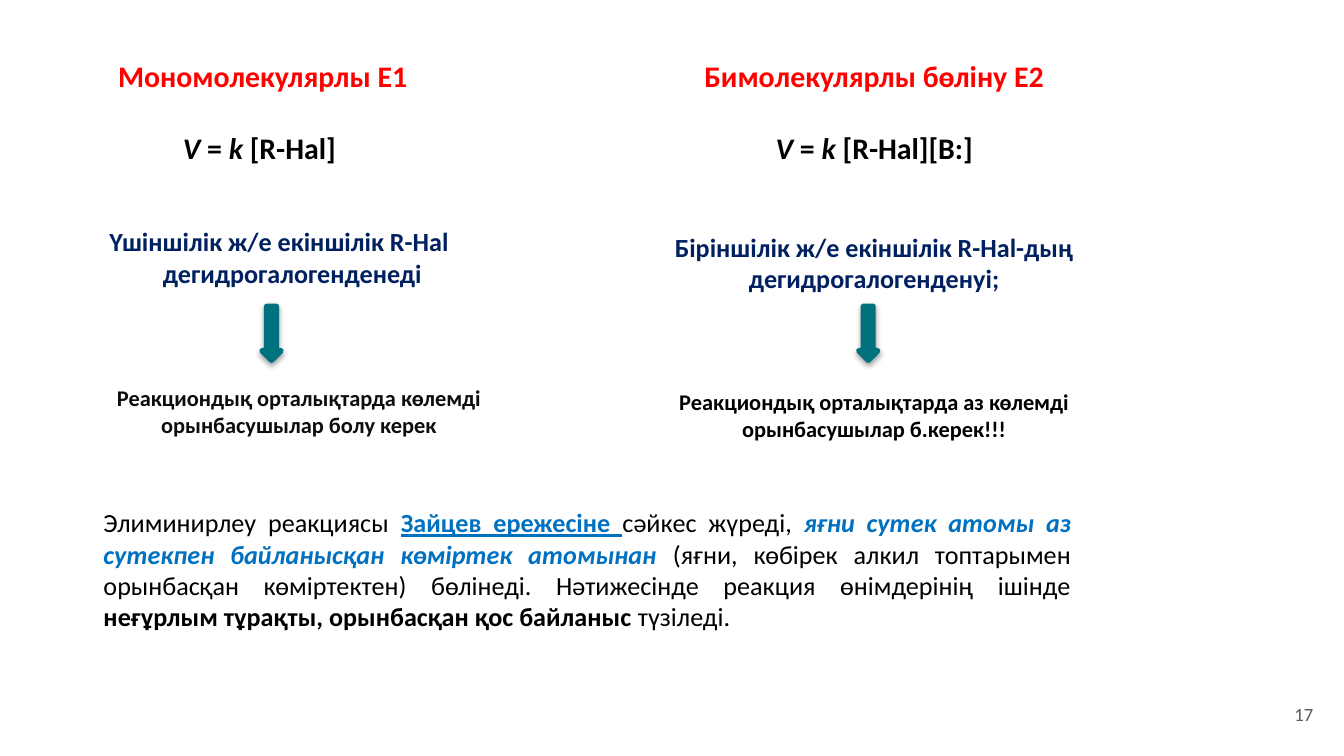
import pptx
import pptx.util
import pptx.dml.color
import pptx.enum.shapes
import pptx.enum.text
import pptx.oxml
import pptx.oxml.ns

Inches = pptx.util.Inches
Pt = pptx.util.Pt
ALIGN = pptx.enum.text.PP_ALIGN
COLORS = {
    "red": "FF0000", "navy": "002060", "blue": "0070C0", "black": "000000",
    "dark": "0D0D0D", "gray": "595959", "teal": "00717D",
}
LINE_16, LINE_14 = 19.5, 17  # line heights in points

presentation = pptx.Presentation()
presentation.slide_width = Inches(10)
presentation.slide_height = Inches(10 * 9 / 16)
slide = presentation.slides.add_slide(presentation.slide_layouts[6])


def rgb(name):
    return pptx.dml.color.RGBColor.from_string(COLORS[name])


def add_text(position, paragraphs):
    """Each paragraph is (align, size, color, bold, space before, runs); each run is (text, font changes)."""
    box = slide.shapes.add_textbox(*map(Inches, position))
    frame = box.text_frame
    frame.word_wrap = True
    for index, (align, size, color, bold, space, runs) in enumerate(paragraphs):
        paragraph = frame.add_paragraph() if index else frame.paragraphs[0]
        paragraph.alignment = align
        paragraph.space_before = Pt(space)
        paragraph.font.name = "Calibri"
        paragraph.font.size = Pt(size)
        paragraph.font.bold = bold
        paragraph.font.color.rgb = rgb(color)
        for text, changes in runs:
            run = paragraph.add_run()
            run.text = text
            for key, value in changes.items():
                if key == "color":
                    run.font.color.rgb = rgb(value)
                else:
                    setattr(run.font, key, value)
    return frame


# Reaction type and rate law of each column, with what follows below on the right
italic = {"italic": True}
columns = [
    ((0.76, 0.38, 2.39, 1.18), "Мономолекулярлы Е1", " [R-Hal] ", []),
    ((4.53, 0.38, 3.95, 3.26), "Бимолекулярлы бөліну Е2", " [R-Hal][B:]", [
        (ALIGN.CENTER, 14, "navy", True, LINE_16 + LINE_14 - 1.5,
         [("Біріншілік ж/е екіншілік R-Hal-дың дегидрогалогенденуі;", {})]),
        (ALIGN.CENTER, 12, "black", True, 3 * LINE_14 - 0.5,
         [("Реакциондық орталықтарда аз көлемді орынбасушылар б.керек!!!", {})]),
    ]),
]
for position, title, concentrations, details in columns:
    rate_law = [("V", italic), (" = ", {}), ("k", italic), (concentrations, {})]
    add_text(position, [
        (ALIGN.CENTER, 16, "red", True, 0, [(title, {})]),
        (ALIGN.CENTER, 16, "black", True, LINE_16, rate_law),
    ] + details)

# Left column: substrate and requirement
substrate = add_text((0.65, 1.63, 3.03, 1.04), [
    (ALIGN.LEFT, 14, "navy", True, 0, [(" Үшіншілік ж/е екіншілік R-Hal", {})]),
    (ALIGN.CENTER, 14, "navy", True, 0, [("дегидрогалогенденеді", {})]),
])
substrate.margin_left = Inches(0.12)
add_text((0.63, 2.81, 3.19, 0.5), [
    (ALIGN.CENTER, 12, "dark", True, 0,
     [("Реакциондық орталықтарда көлемді орынбасушылар болу керек", {})]),
])

# Arrows from substrate to requirement
for left in (1.82, 6.26):
    arrow = slide.shapes.add_shape(
        pptx.enum.shapes.MSO_SHAPE.RIGHT_ARROW,
        Inches(left), Inches(2.41), Inches(0.4), Inches(0.14))
    arrow.rotation = 90
    arrow.fill.solid()
    arrow.fill.fore_color.rgb = rgb("teal")
    arrow.line.color.rgb = rgb("teal")
    arrow.line.width = Pt(3)
    arrow.shadow.inherit = False
    effects = arrow._element.spPr.find(pptx.oxml.ns.qn("a:effectLst"))
    effects.append(pptx.oxml.parse_xml(
        '<a:outerShdw xmlns:a="http://schemas.openxmlformats.org/drawingml/2006/main" '
        f'blurRad="{Pt(3.1)}" dist="{Pt(1.6)}" dir="5400000" rotWithShape="0">'
        f'<a:srgbClr val="{COLORS["black"]}"><a:alpha val="38000"/></a:srgbClr></a:outerShdw>'))

# Zaitsev rule
conclusion = add_text((0.65, 3.72, 7.42, 1.04), [
    (ALIGN.JUSTIFY, 14, "black", False, 0, [
        ("Элиминирлеу реакциясы ", {}),
        ("Зайцев ережесіне ", {"color": "blue", "bold": True, "underline": True}),
        ("сәйкес жүреді, ", {}),
        ("яғни сутек атомы аз сутекпен байланысқан көміртек атомынан",
         {"color": "blue", "bold": True, "italic": True}),
        (" (яғни, көбірек алкил топтарымен орынбасқан көміртектен) бөлінеді. "
         "Нәтижесінде реакция өнімдерінің ішінде ", {}),
        ("неғұрлым тұрақты, орынбасқан қос байланыс", {"bold": True}),
        (" түзіледі. ", {}),
    ]),
])
conclusion.margin_left = Inches(0.12)

slide_number = add_text((9.27, 5.1, 0.6, 0.43), [
    (ALIGN.RIGHT, 10, "gray", False, 0, [("17", {})]),
])
slide_number.vertical_anchor = pptx.enum.text.MSO_ANCHOR.MIDDLE

presentation.save("out.pptx")
